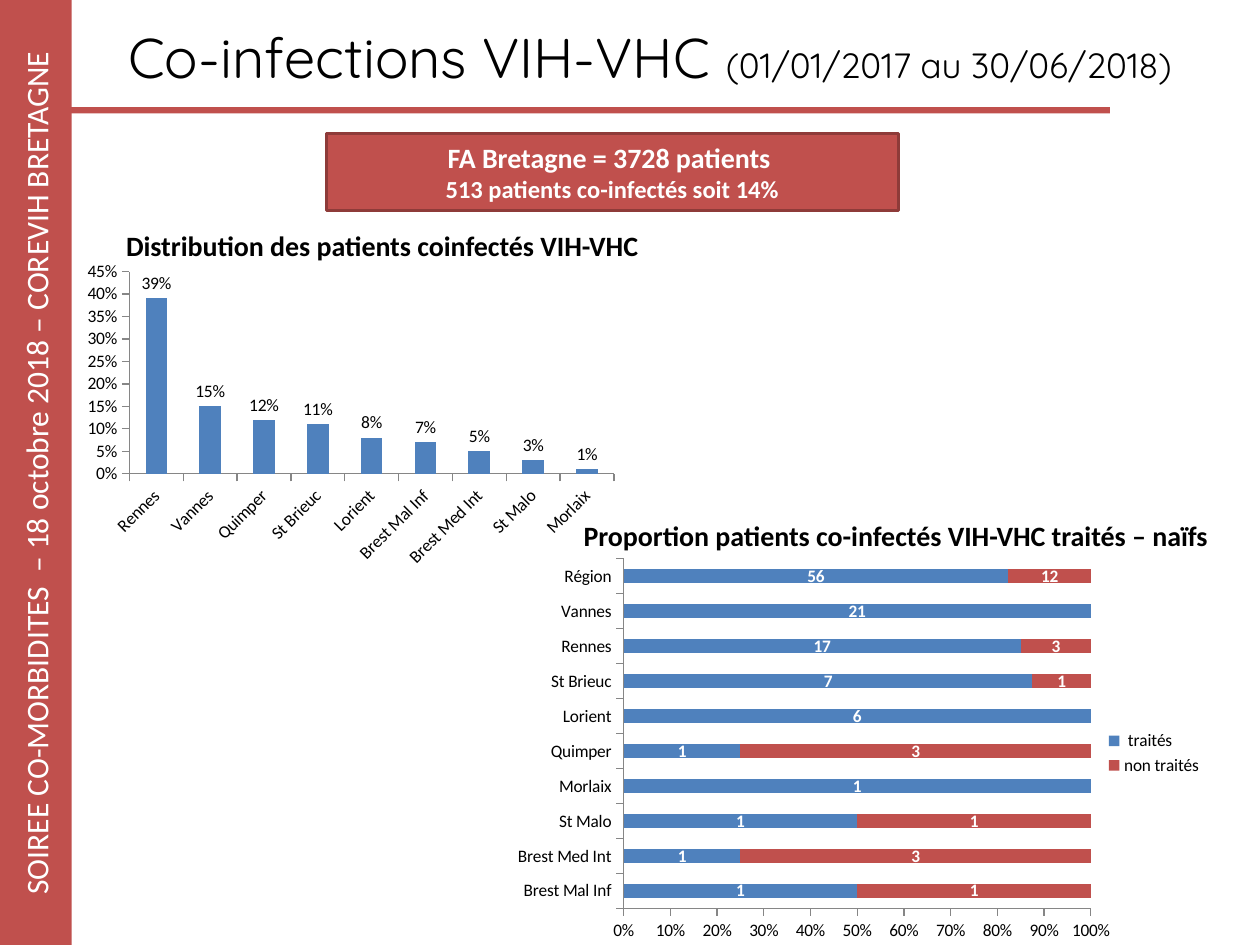
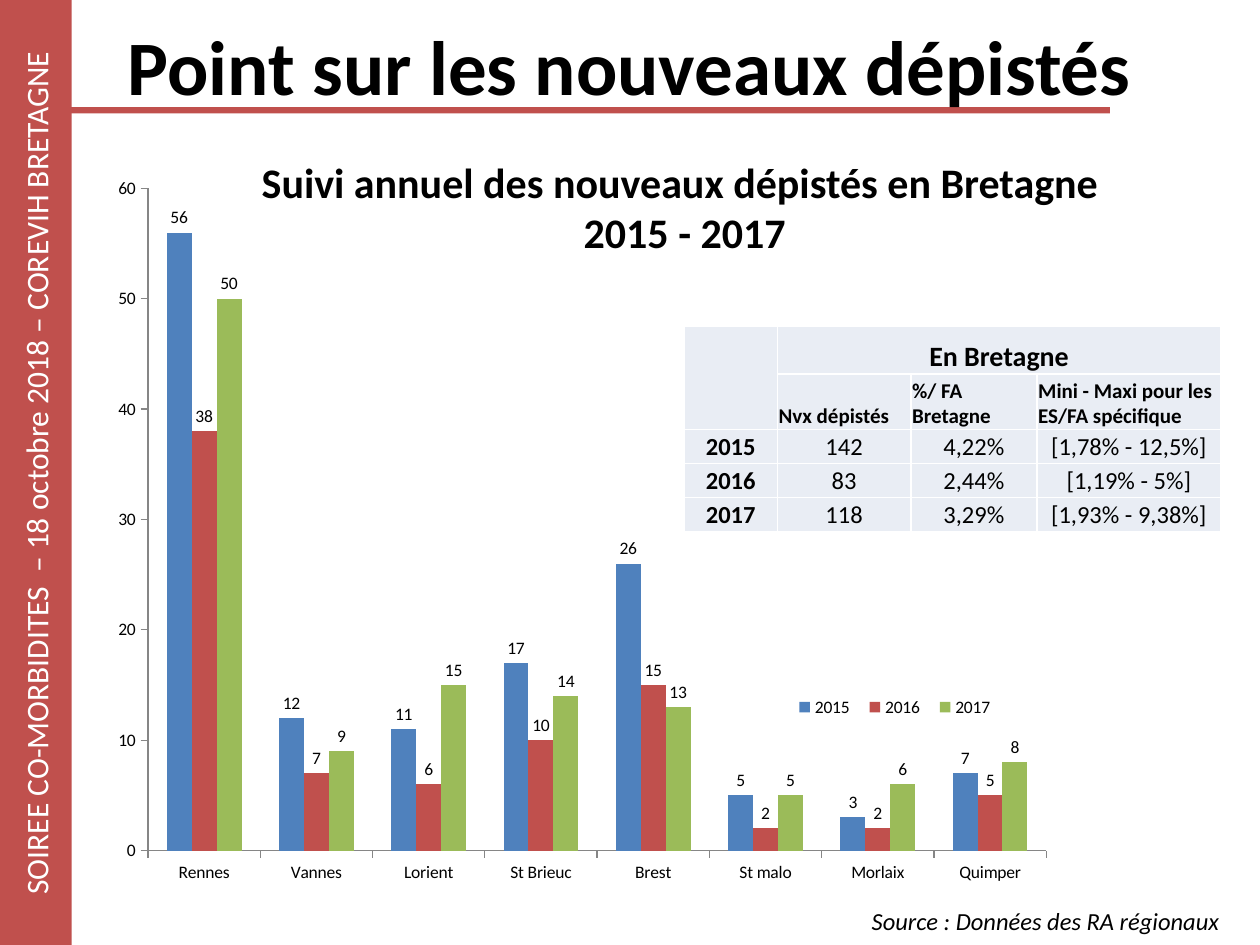
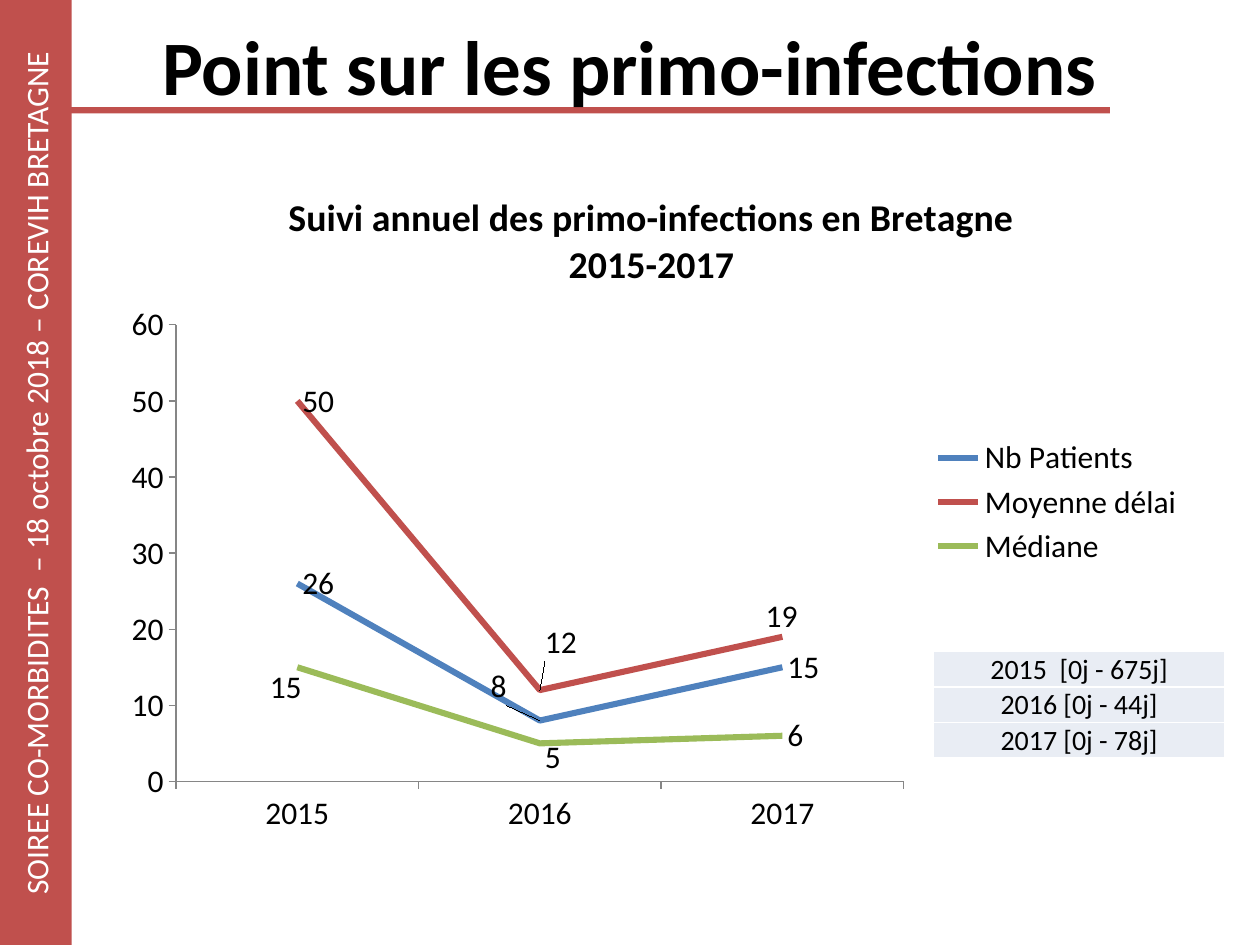
from lxml import etree
from pptx import Presentation
from pptx import util as u
from pptx.chart import data
from pptx.dml import color
from pptx.enum import chart as ch, shapes, text
from pptx.oxml import ns

RED, BLUE, GREEN = "C0504D", "4F81BD", "9BBB59"
DARK, PALE, GREY = "8E3B39", "E9EDF4", "868686"
BLACK, WHITE = "000000", "FFFFFF"
FONT = "Calibri"
MID, LEFT = text.PP_ALIGN.CENTER, text.PP_ALIGN.LEFT


def rgb(code):
    return color.RGBColor.from_string(code)


def box(at):
    return [u.Inches(v) for v in at]


def move(shape, at):
    shape.left, shape.top, shape.width, shape.height = box(at)


def style(font, size, tint=BLACK, bold=False, italic=False, name=FONT):
    font.size, font.bold, font.italic, font.name = u.Pt(size), bold, italic, name
    font.color.rgb = rgb(tint)


def write(frame, lines, align=MID, **look):
    """Fill a text frame; each line is a (text, size) pair."""
    frame.text = "\n".join(line for line, _ in lines)
    for para, (_, size) in zip(frame.paragraphs, lines):
        para.alignment = align
        for run in para.runs:
            style(run.font, size, **look)


# Shared elements
def block(slide, at, line=None):
    shape = slide.shapes.add_shape(shapes.MSO_SHAPE.RECTANGLE, *box(at))
    shape.shadow.inherit = False
    shape.fill.solid()
    shape.fill.fore_color.rgb = rgb(RED)
    if line:
        shape.line.color.rgb = rgb(line)
        shape.line.width = u.Pt(2)
    else:
        shape.line.fill.background()
    return shape


def bands(deck, slide):
    """Build the side band and title rule, then hand them to the master."""
    side = block(slide, (0, 0, 0.57, 7.51))
    write(side.text_frame, [("SOIREE CO-MORBIDITES  – 18 octobre 2018 – COREVIH BRETAGNE", 18)],
          tint=WHITE)
    side.element.xpath(".//a:bodyPr")[0].set("vert", "vert270")
    rule = block(slide, (0.56, 0.85, 8.25, 0.05))
    for num, shape in enumerate((side, rule), 20):
        shape.element.xpath(".//p:cNvPr")[0].set("id", str(num))
        deck.slide_master.shapes.element.append(shape.element)


def head(slide, words, at=(0.5, 0.05, 9, 0.93), size=44, bold=True, name=FONT):
    title = slide.shapes.title
    move(title, at)
    title.text_frame.auto_size = text.MSO_AUTO_SIZE.NONE
    write(title.text_frame, [(words, size)], bold=bold, name=name)
    return title


def label(slide, at, lines, align=MID, wrap=True, **look):
    frame = slide.shapes.add_textbox(*box(at)).text_frame
    frame.word_wrap = wrap
    write(frame, lines, align, **look)


# Tables
def border(cell):
    props = cell._tc.get_or_add_tcPr()
    for spot, side in enumerate(("lnL", "lnR", "lnT", "lnB")):
        line = etree.Element(ns.qn("a:" + side), w="12700")
        fill = etree.SubElement(line, ns.qn("a:solidFill"))
        etree.SubElement(fill, ns.qn("a:srgbClr"), val=WHITE)
        props.insert(spot, line)


def table(slide, at, cols, rows):
    grid = slide.shapes.add_table(len(rows), len(cols), *box(at)).table
    grid.first_row = grid.horz_banding = False
    for col, width in zip(grid.columns, cols):
        col.width = u.Inches(width)
    for row, height in zip(grid.rows, rows):
        row.height = u.Inches(height)
    for cell in grid.iter_cells():
        cell.margin_left = cell.margin_right = cell.margin_top = u.Inches(0.01)
        cell.margin_bottom = 0
        cell.vertical_anchor = text.MSO_ANCHOR.MIDDLE
        cell.fill.solid()
        cell.fill.fore_color.rgb = rgb(PALE)
        border(cell)
    return grid


# Charts
def place(parent, spot, edge=True, inner=False, **pos):
    """Give a chart part a manual layout as child number spot."""
    for old in parent.findall(ns.qn("c:layout")):
        parent.remove(old)
    layout = etree.Element(ns.qn("c:layout"))
    manual = etree.SubElement(layout, ns.qn("c:manualLayout"))
    marks = {"layoutTarget": "inner"} if inner else {}
    if edge:
        marks.update(xMode="edge", yMode="edge")
    for tag, val in {**marks, **pos}.items():
        etree.SubElement(manual, ns.qn("c:" + tag), val=str(val))
    parent.insert(spot, layout)


def chart(slide, kind, at, cats, rows, plot, size=10, fmt="General", legend=True):
    """Draw a chart; rows holds (name, values, colour) for each series."""
    book = data.CategoryChartData(number_format=fmt)
    book.categories = cats
    for name, vals, _ in rows:
        book.add_series(name, vals)
    graph = slide.shapes.add_chart(kind, *box(at), book).chart
    style(graph.font, size)
    graph.has_title = False
    graph.has_legend = legend
    if legend:
        graph.legend.position = ch.XL_LEGEND_POSITION.RIGHT
        graph.legend.include_in_layout = False
    for axis in (graph.category_axis, graph.value_axis):
        axis.has_major_gridlines = False
        axis.major_tick_mark = ch.XL_TICK_MARK.OUTSIDE
        axis.format.line.color.rgb = rgb(GREY)
    area = graph.plots[0]
    lines = kind == ch.XL_CHART_TYPE.LINE
    if not lines:
        area.gap_width = 150
        area.vary_by_categories = False
    for ser, (_, _, tint) in zip(area.series, rows):
        if lines:
            ser.smooth = False
            ser.marker.style = ch.XL_MARKER_STYLE.NONE
            ser.format.line.color.rgb = rgb(tint)
            ser.format.line.width = u.Pt(3.5)
        else:
            ser.format.fill.solid()
            ser.format.fill.fore_color.rgb = rgb(tint)
        ser.data_labels.show_value = True
        style(ser.data_labels.font, size)
    part = graph.element.xpath(".//c:plotArea")[0]
    place(part, 0, inner=True, **dict(zip("xywh", plot)))
    return graph


def scale(graph, top, step):
    axis = graph.value_axis
    axis.minimum_scale, axis.maximum_scale, axis.major_unit = 0, top, step


def nudge(graph, row, spot, x, y):
    """Shift one value label from its place right of the point."""
    tag = graph.plots[0].series[row].points[spot].data_label
    style(tag.font, 18)
    tag.position = ch.XL_LABEL_POSITION.RIGHT
    part = graph.element.xpath(f".//c:ser[{row + 1}]//c:dLbl[c:idx/@val='{spot}']")[0]
    place(part, 1, edge=False, x=x, y=y)


# Slides
def coinfect(slide):
    title = head(slide, "Co-infections VIH-VHC ", (0.5, 0.09, 9.32, 0.71), 32, False, "Quicksand")
    run = title.text_frame.paragraphs[0].add_run()
    run.text = "(01/01/2017 au 30/06/2018)"
    style(run.font, 20, name="Quicksand")

    body = slide.placeholders[1]
    move(body, (0.75, 1.76, 4.62, 0.36))
    body.text_frame.auto_size = text.MSO_AUTO_SIZE.NONE
    write(body.text_frame, [("Distribution des patients coinfectés VIH-VHC ", 16)], bold=True)
    props = body.element.xpath(".//a:pPr")[0]
    props.set("marL", "0")
    props.set("indent", "0")
    etree.SubElement(props, ns.qn("a:buNone"))

    total = block(slide, (2.59, 1.06, 4.54, 0.61), DARK)
    write(total.text_frame, [("FA Bretagne = 3728 patients ", 16),
                             ("513 patients co-infectés soit 14%", 14)], tint=WHITE, bold=True)

    # Share of patients by town
    towns = [" Rennes", "Vannes", "Quimper", "St Brieuc", "Lorient", "Brest Mal Inf",
             "Brest Med Int", "St Malo", "Morlaix"]
    share = [0.39, 0.15, 0.12, 0.11, 0.08, 0.07, 0.05, 0.03, 0.01]
    graph = chart(slide, ch.XL_CHART_TYPE.COLUMN_CLUSTERED, (0.59, 2.03, 4.37, 2.51), towns,
                  [("Series 1", share, BLUE)], (0.1, 0.05, 0.88, 0.64), fmt="0%", legend=False)
    scale(graph, 0.45, 0.05)
    style(graph.category_axis.tick_labels.font, 10)
    graph.element.xpath(".//c:catAx/c:txPr/a:bodyPr")[0].set("rot", "-2700000")

    # Treated against untreated
    towns = ["Brest Mal Inf", "Brest Med Int", "St Malo", "Morlaix", "Quimper", "Lorient",
             "St Brieuc", " Rennes", "Vannes", " Région"]
    rows = [(" traités", [1, 1, 1, 1, 1, 6, 7, 17, 21, 56], BLUE),
            ("non traités", [1, 3, 1, 0, 3, 0, 1, 3, 0, 12], RED)]
    graph = chart(slide, ch.XL_CHART_TYPE.BAR_STACKED_100, (4.11, 4.43, 5.53, 3.09), towns,
                  rows, (0.14, 0, 0.68, 0.9))
    graph.plots[0].overlap = 100
    graph.value_axis.tick_labels.number_format = "0%"
    graph.value_axis.tick_labels.number_format_is_linked = False
    for ser in graph.plots[0].series:
        style(ser.data_labels.font, 10, WHITE, True)
        ser.data_labels.number_format = "0;;"  # hides zeros
        ser.data_labels.number_format_is_linked = False

    label(slide, (4.49, 4.07, 5.29, 0.37),
          [("Proportion patients co-infectés VIH-VHC traités – naïfs ", 16)],
          wrap=False, bold=True)


def screened(slide):
    head(slide, "Point sur les nouveaux dépistés")
    towns = ["Rennes", "Vannes", "Lorient", "St Brieuc", "Brest", "St malo", "Morlaix", "Quimper"]
    rows = [("2015", [56, 12, 11, 17, 26, 5, 3, 7], BLUE),
            ("2016", [38, 7, 6, 10, 15, 2, 2, 5], RED),
            ("2017", [50, 9, 15, 14, 13, 5, 6, 8], GREEN)]
    graph = chart(slide, ch.XL_CHART_TYPE.COLUMN_CLUSTERED, (0.76, 1.32, 8.29, 5.84), towns,
                  rows, (0.05, 0.03, 0.86, 0.9))
    scale(graph, 60, 10)
    place(graph.legend._element, 1, x=0.66, y=0.71, w=0.21, h=0.05)

    label(slide, (1.93, 1.19, 7.01, 0.91),
          [("Suivi annuel des nouveaux dépistés en Bretagne ", 24), ("2015 - 2017", 24)], bold=True)

    # Regional figures
    grid = table(slide, (5.43, 2.59, 4.26, 1.63), (0.74, 1.06, 1, 1.46),
                 (0.38, 0.44, 0.27, 0.27, 0.27))
    grid.cell(0, 0).merge(grid.cell(1, 0))
    grid.cell(0, 1).merge(grid.cell(0, 3))
    write(grid.cell(0, 1).text_frame, [("En Bretagne", 16)], bold=True)
    grid.cell(0, 1).vertical_anchor = text.MSO_ANCHOR.BOTTOM
    names = ("Nvx dépistés", "%/ FA Bretagne", "Mini - Maxi pour les ES/FA spécifique")
    for col, name in enumerate(names, 1):
        cell = grid.cell(1, col)
        write(cell.text_frame, [(name, 12)], LEFT, bold=True)
        cell.vertical_anchor = text.MSO_ANCHOR.BOTTOM
    years = [("2015", "142", "4,22%", "[1,78% - 12,5%]"),
             ("2016", "83", "2,44%", "[1,19% - 5%]"),
             ("2017", "118", "3,29%", "[1,93% - 9,38%]")]
    for row, vals in enumerate(years, 2):
        for col, val in enumerate(vals):
            write(grid.cell(row, col).text_frame, [(val, 14)], bold=col == 0)

    label(slide, (6.82, 7.14, 3.07, 0.34), [("Source : Données des RA régionaux", 14)],
          LEFT, italic=True)


def primo(slide):
    head(slide, "Point sur les primo-infections")
    rows = [("Nb Patients", [26, 8, 15], BLUE),
            ("Moyenne délai", [50, 12, 19], RED),
            ("Médiane", [15, 5, 6], GREEN)]
    graph = chart(slide, ch.XL_CHART_TYPE.LINE, (0.88, 1.28, 8.62, 5.41),
                  ["2015", "2016", "2017"], rows, (0.06, 0.24, 0.67, 0.67), 18)
    scale(graph, 60, 10)
    name = graph.chart_title
    write(name.text_frame, [("Suivi annuel des primo-infections en Bretagne", 21.6),
                            ("2015-2017", 21.6)], bold=True)
    place(name._element, 1, x=0.16, y=0.04)
    for shift in ((0, 1, -0.05, -0.05), (1, 1, 0, -0.07), (1, 2, -0.02, -0.03),
                  (2, 0, -0.03, 0.03), (2, 1, 0, 0.02)):
        nudge(graph, *shift)

    # Range of delays by year
    grid = table(slide, (7.41, 5.17, 2.31, 0.84), (2.31,), (0.28,) * 3)
    spans = ("2015  [0j - 675j]", "2016 [0j - 44j]", "2017 [0j - 78j]")
    for row, span in enumerate(spans):
        write(grid.cell(row, 0).text_frame, [(span, 16)])


def main():
    deck = Presentation()
    deck.slide_width, deck.slide_height = u.Inches(10), u.Inches(7.5)
    full, bare = deck.slide_layouts[1], deck.slide_layouts[5]
    first = deck.slides.add_slide(full)
    bands(deck, first)
    coinfect(first)
    screened(deck.slides.add_slide(bare))
    primo(deck.slides.add_slide(bare))
    deck.save("out.pptx")


if __name__ == "__main__":
    main()
